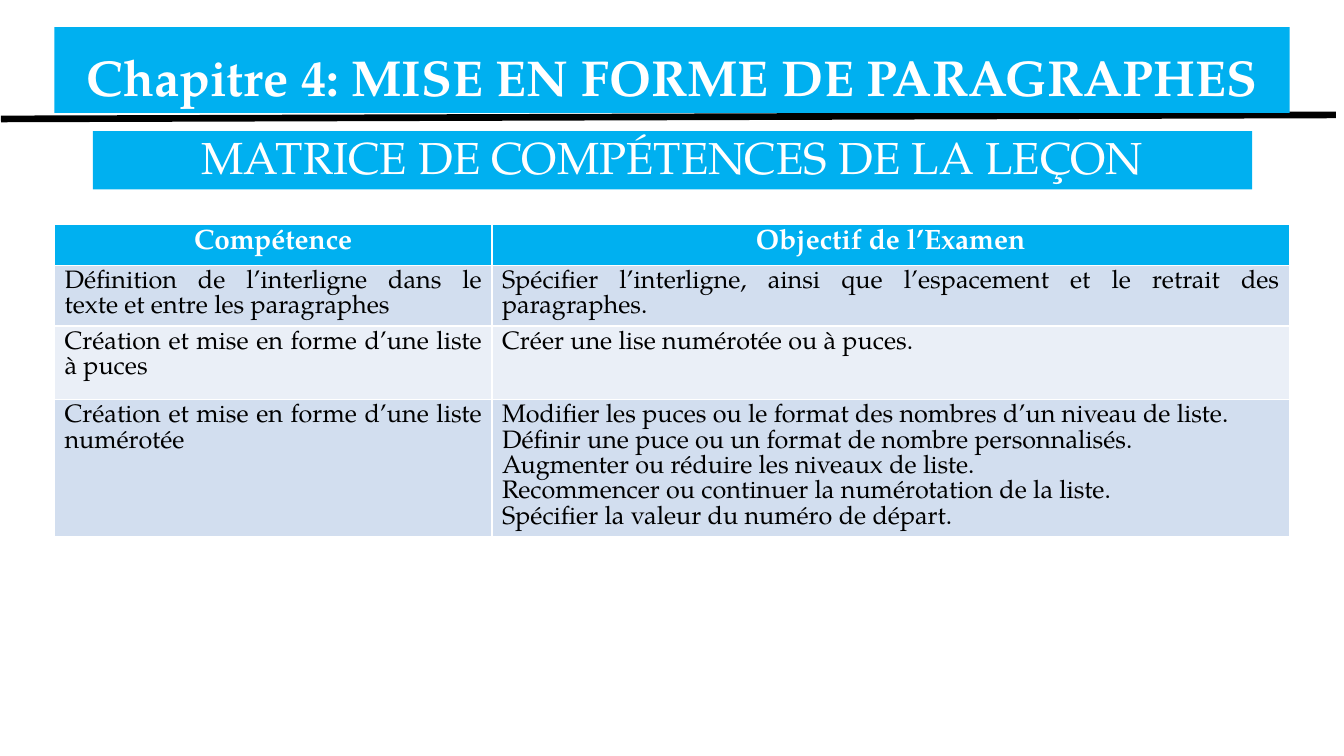
from pptx import Presentation
from pptx.dml.color import RGBColor
from pptx.enum import shapes, text
from pptx.oxml.ns import qn
from pptx.util import Inches, Pt
from lxml import etree

BLUE = RGBColor(0x00, 0xB0, 0xF0)
WHITE = RGBColor(0xFF, 0xFF, 0xFF)
BLACK = RGBColor(0x00, 0x00, 0x00)
BANDS = [RGBColor(0xEA, 0xEF, 0xF7), RGBColor(0xD2, 0xDE, 0xEF)]
FONT = "TeX Gyre Pagella"
ALIGN = text.PP_ALIGN
ANCHOR = text.MSO_ANCHOR


def write(par, words, size, color, bold, align):
    par.alignment = align
    run = par.add_run()
    run.text = words
    run.font.name = FONT
    run.font.size = Pt(size)
    run.font.bold = bold
    run.font.color.rgb = color


deck = Presentation()
deck.slide_width = Inches(13.33)
deck.slide_height = Inches(7.5)
slide = deck.slides.add_slide(deck.slide_layouts[0])

banners = [
    (slide.shapes.title, (0.54, 0.27, 12.25, 0.85), ANCHOR.BOTTOM,
     "Chapitre 4: MISE EN FORME DE PARAGRAPHES", 36, True),
    (slide.placeholders[1], (0.92, 1.3, 11.5, 0.58), ANCHOR.MIDDLE,
     "MATRICE DE COMPÉTENCES DE LA LEÇON", 32, False),
]
for banner, place, anchor, words, size, bold in banners:
    banner.left, banner.top, banner.width, banner.height = map(Inches, place)
    banner.fill.solid()
    banner.fill.fore_color.rgb = BLUE
    frame = banner.text_frame
    frame.auto_size = text.MSO_AUTO_SIZE.NONE
    frame.word_wrap = True
    frame.vertical_anchor = anchor
    par = frame.paragraphs[0]
    par.line_spacing = 0.9
    par.space_before = Pt(0)
    write(par, words, size, WHITE, bold, ALIGN.CENTER)

rule = slide.shapes.add_connector(
    shapes.MSO_CONNECTOR.STRAIGHT,
    Inches(0.01), Inches(1.18), Inches(13.25), Inches(1.14))
rule.line.color.rgb = BLACK
rule.line.width = Pt(4.75)
props = rule._element.spPr
etree.SubElement(props, qn("a:effectLst"))
slide.shapes.title._element.addprevious(rule._element)

rows = [
    (0.4, "Compétence", ["Objectif de l’Examen"]),
    (0.6, "Définition de l’interligne dans le texte et entre les paragraphes",
     ["Spécifier l’interligne, ainsi que l’espacement et le retrait des paragraphes."]),
    (0.73, "Création et mise en forme d’une liste à puces",
     ["Créer une lise numérotée ou à puces."]),
    (1.35, "Création et mise en forme d’une liste numérotée",
     ["Modifier les puces ou le format des nombres d’un niveau de liste.",
      "Définir une puce ou un format de nombre personnalisés.",
      "Augmenter ou réduire les niveaux de liste.",
      "Recommencer ou continuer la numérotation de la liste.",
      "Spécifier la valeur du numéro de départ."]),
]
grid = slide.shapes.add_table(
    len(rows), 2, Inches(0.54), Inches(2.23), Inches(12.25), Inches(3.08)).table
for col, width in zip(grid.columns, (4.34, 7.91)):
    col.width = Inches(width)

for i, (height, skill, goals) in enumerate(rows):
    grid.rows[i].height = Inches(height)
    head = i == 0
    look = (20, WHITE, True, ALIGN.CENTER) if head else (18, BLACK, False, ALIGN.JUSTIFY)
    for j, lines in enumerate(([skill], goals)):
        cell = grid.cell(i, j)
        cell.fill.solid()
        cell.fill.fore_color.rgb = BLUE if head else BANDS[i % 2]
        frame = cell.text_frame
        for n, line in enumerate(lines):
            par = frame.add_paragraph() if n else frame.paragraphs[0]
            write(par, line, *look)

deck.save("out.pptx")
